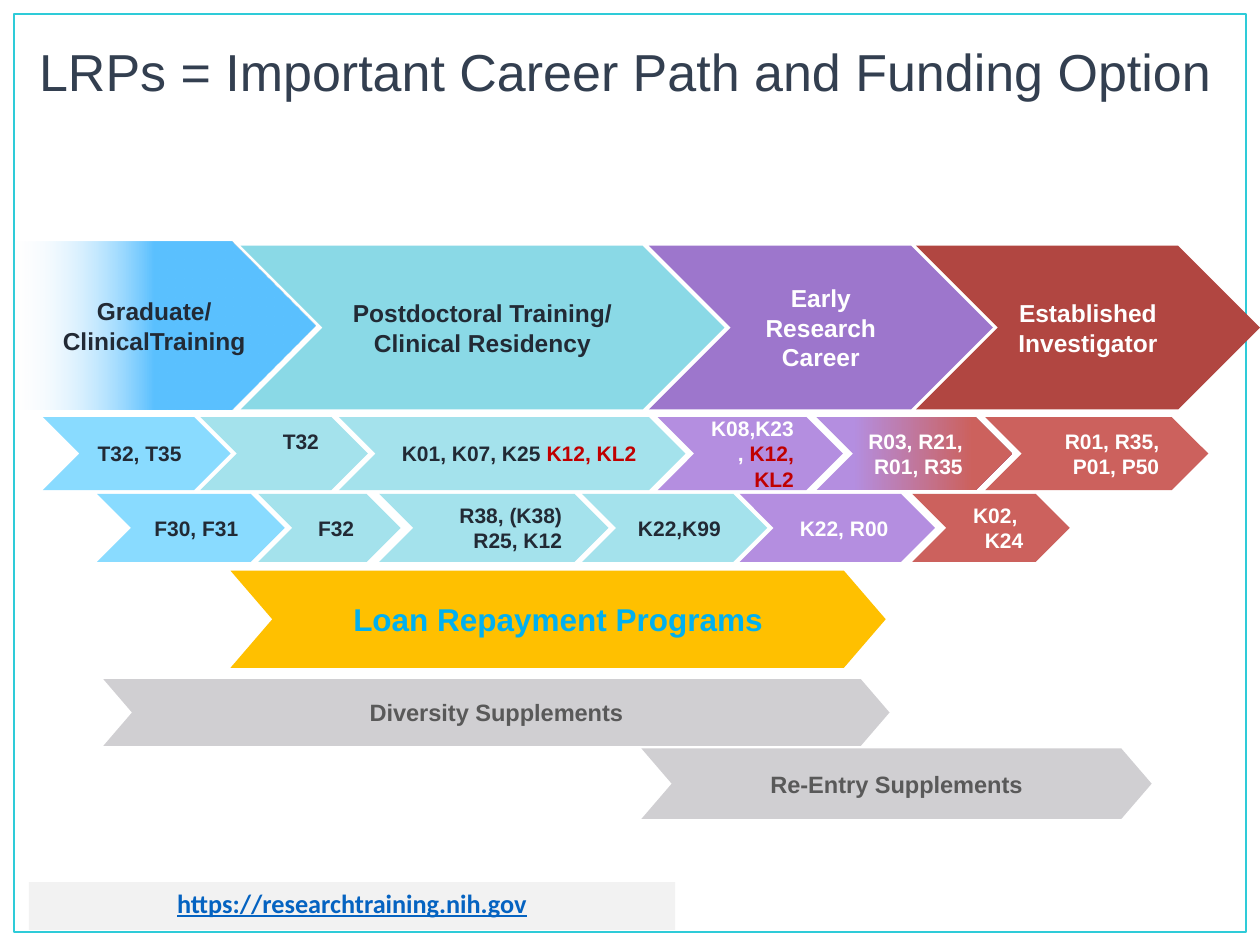
from lxml import etree
from pptx import Presentation
from pptx.dml.color import RGBColor
from pptx.enum.shapes import MSO_SHAPE
from pptx.enum.text import MSO_ANCHOR, PP_ALIGN
from pptx.oxml.ns import qn
from pptx.util import Inches, Pt

RECT, PLATE, CHEVRON = MSO_SHAPE.RECTANGLE, MSO_SHAPE.PENTAGON, MSO_SHAPE.CHEVRON
LEFT, MID, RIGHT = PP_ALIGN.LEFT, PP_ALIGN.CENTER, PP_ALIGN.RIGHT
TOP, MIDDLE = MSO_ANCHOR.TOP, MSO_ANCHOR.MIDDLE

WHITE = RGBColor(0xFF, 0xFF, 0xFF)
DARK = RGBColor(0x22, 0x2A, 0x35)
SLATE = RGBColor(0x33, 0x3F, 0x50)
GREY = RGBColor(0x59, 0x59, 0x59)
SILVER = RGBColor(0xD0, 0xCF, 0xD2)
PALE = RGBColor(0xF2, 0xF2, 0xF2)
RED = RGBColor(0xC0, 0x00, 0x00)
CYAN = RGBColor(0x2E, 0xCB, 0xD8)
BLUE = RGBColor(0x5B, 0xC1, 0xFF)
SKY = RGBColor(0x89, 0xDB, 0xFF)
TEAL = RGBColor(0x8A, 0xD9, 0xE6)
AQUA = RGBColor(0xA4, 0xE2, 0xEC)
PURPLE = RGBColor(0x9D, 0x76, 0xCC)
LILAC = RGBColor(0xB4, 0x8E, 0xE0)
BRICK = RGBColor(0xB1, 0x46, 0x41)
CORAL = RGBColor(0xCC, 0x61, 0x5D)
GOLD = RGBColor(0xFF, 0xC0, 0x00)
AZURE = RGBColor(0x00, 0xB0, 0xF0)
LINK = RGBColor(0x05, 0x63, 0xC1)

TITLE = "LRPs = Important Career Path and Funding Option"
SITE = "https://researchtraining.nih.gov"
FADE = (180, (0.53, BLUE), (1, WHITE))
BLEND = (0, (0.19, LILAC), (0.8, CORAL))

# Row: top, height, size, align, notch, items (left, width, fill, ink, text, accent)
ROWS = [
    (1.95, 1.3, 14, MID, 0.5, [
        (7.27, 2.73, BRICK, WHITE, "Established Investigator", ""),
        (5.15, 2.73, PURPLE, WHITE, "Early Research Career", ""),
        (1.91, 3.84, TEAL, DARK, "Postdoctoral Training/\nClinical Residency", ""),
    ]),
    (3.31, 0.58, 12, RIGHT, 0.5, [
        (0.34, 1.49, SKY, DARK, "T32, T35", ""),
        (1.59, 1.33, AQUA, DARK, "T32", ""),
        (2.69, 2.75, AQUA, DARK, "K01, K07, K25 ", "K12, KL2"),
        (5.22, 1.47, LILAC, WHITE, "K08,K23, ", "K12, KL2"),
        (6.48, 1.55, BLEND, WHITE, "R03, R21, R01, R35", ""),
        (7.82, 1.77, CORAL, WHITE, "R01, R35, P01, P50", ""),
    ]),
    (3.92, 0.54, 12, RIGHT, 0.5, [
        (0.77, 1.49, SKY, DARK, "F30, F31", ""),
        (2.05, 1.13, AQUA, DARK, "F32", ""),
        (3.01, 1.82, AQUA, DARK, "R38, (K38)\nR25, K12", ""),
        (4.62, 1.47, AQUA, DARK, "K22,K99", ""),
        (5.87, 1.55, LILAC, WHITE, "K22, R00", ""),
        (7.24, 1.25, CORAL, WHITE, "K02, \nK24", ""),
    ]),
    (4.53, 0.77, 18, MID, 0.43, [(1.83, 5.2, GOLD, AZURE, "Loan Repayment Programs", "")]),
    (5.39, 0.53, 13.5, MID, 0.43, [(0.82, 6.24, SILVER, GREY, "Diversity Supplements", "")]),
    (5.94, 0.56, 13.5, MID, 0.43, [(5.09, 4.05, SILVER, GREY, "Re-Entry Supplements", "")]),
]


def paint(shape, fill):
    if fill is None:
        shape.fill.background()
    elif isinstance(fill, RGBColor):
        shape.fill.solid()
        shape.fill.fore_color.rgb = fill
    else:
        angle, *stops = fill
        shape.fill.gradient()
        shape.fill.gradient_angle = angle
        for stop, (pos, color) in zip(shape.fill.gradient_stops, stops):
            stop.position = pos
            stop.color.rgb = color


def add_box(slide, kind, left, top, width, height, fill):
    shape = slide.shapes.add_shape(kind, *map(Inches, (left, top, width, height)))
    shape.shadow.inherit = False
    shape.line.fill.background()
    paint(shape, fill)
    return shape


def write(shape, parts, size, align, anchor=MIDDLE, face="Arial", bold=True):
    frame = shape.text_frame
    frame.word_wrap = True
    frame.vertical_anchor = anchor
    para = frame.paragraphs[0]
    para.alignment = align
    for text, ink in parts:
        for n, line in enumerate(text.split("\n")):
            if n:
                para.add_line_break()
            run = para.add_run()
            run.text = line
            run.font.name = face
            run.font.size = Pt(size)
            run.font.bold = bold
            run.font.color.rgb = ink
    return para


def main():
    deck = Presentation()
    deck.slide_width, deck.slide_height = Inches(10), Inches(7.5)
    slide = deck.slides.add_slide(deck.slide_layouts[5])

    frame = add_box(slide, RECT, 0.11, 0.11, 9.78, 7.29, None)
    frame.line.color.rgb = CYAN
    frame.line.width = Pt(1)

    title = slide.shapes.title
    title.left, title.top, title.width, title.height = map(Inches, (0.21, 0.11, 9.71, 0.96))
    write(title, [(TITLE, SLATE)], 29.7, LEFT, bold=False).line_spacing = 0.9

    plate = add_box(slide, PLATE, 0.09, 1.92, 2.41, 1.33, FADE)
    clear = plate._element.findall(".//" + qn("a:gs"))[-1][0]
    etree.SubElement(clear, qn("a:alpha")).set("val", "0")
    para = write(plate, [("Graduate/ClinicalTraining", DARK)], 14, MID)
    para._p.get_or_add_pPr().set("marL", str(Inches(0.19)))

    for top, height, size, align, notch, items in ROWS:
        for left, width, fill, ink, text, accent in items:
            arrow = add_box(slide, CHEVRON, left, top, width, height, fill)
            arrow.adjustments[0] = notch
            parts = [(text, ink)] + ([(accent, RED)] if accent else [])
            write(arrow, parts, size, align)
            if text == "T32":
                arrow.text_frame.margin_bottom = Inches(0.24)

    foot = add_box(slide, RECT, 0.23, 7, 5.13, 0.38, PALE)
    foot.text_frame.margin_top = foot.text_frame.margin_bottom = Inches(0.07)
    para = write(foot, [(SITE, LINK)], 15, MID, TOP, "Calibri")
    para.line_spacing = 0.9
    para.runs[0].font.underline = True

    deck.save("out.pptx")


if __name__ == "__main__":
    main()
